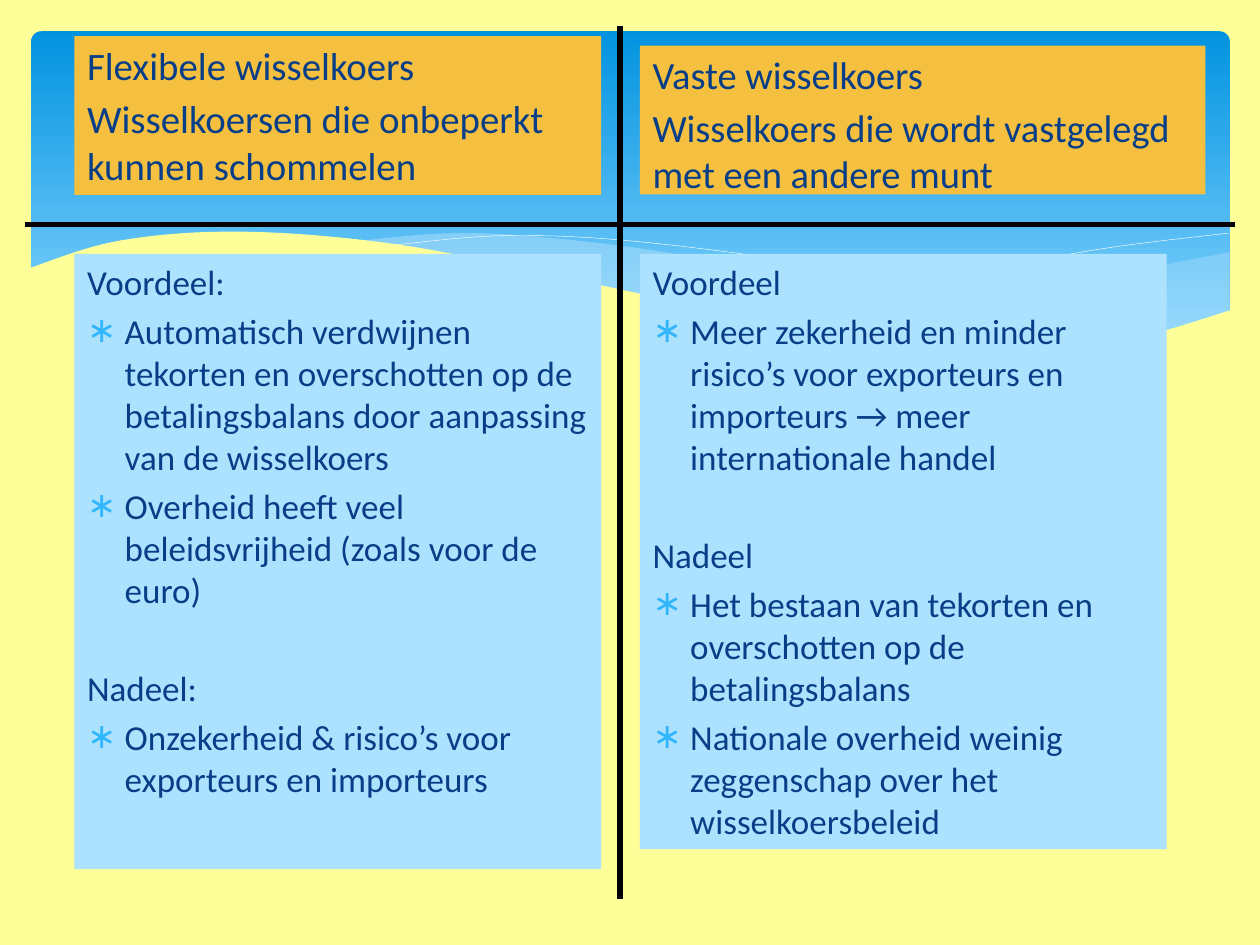
"""Build a slide comparing flexible and fixed exchange rates."""
from lxml.etree import SubElement
from pptx import Presentation
from pptx.dml.color import RGBColor
from pptx.enum.shapes import MSO_CONNECTOR, MSO_SHAPE
from pptx.enum.text import MSO_ANCHOR, MSO_AUTO_SIZE, PP_ALIGN
from pptx.oxml.ns import qn
from pptx.util import Cm, Pt

YELLOW = RGBColor(0xFF, 0xFF, 0x99)
ORANGE = RGBColor(0xF5, 0xC0, 0x40)
PALE_BLUE = RGBColor(0xAD, 0xE2, 0xFE)
NAVY = RGBColor(0x07, 0x3E, 0x87)
SKY_TOP = RGBColor(0x02, 0x93, 0xE0)
SKY_BOTTOM = RGBColor(0x83, 0xD3, 0xFE)
WAVE_BLUE = RGBColor(0xC6, 0xE7, 0xFC)
BULLET_BLUE = RGBColor(0x31, 0xB6, 0xFD)
WHITE = RGBColor(0xFF, 0xFF, 0xFF)
BLACK = RGBColor(0, 0, 0)

CURVE_STEPS = 8
INDENT = Cm(0.76)
ROW_GAP, SECTION_GAP = Pt(4), Pt(32)
BODY_TOP, BODY_WIDTH = 5.12, 10.62

COLUMNS = [
    {"left": 1.5,
     "header": {"top": 0.73, "width": 10.62, "height": 3.2,
                "size": 22.2, "inset": 0.1},
     "body_height": 12.4,
     "definition": ["Flexibele wisselkoers",
                    "Wisselkoersen die onbeperkt kunnen schommelen"],
     "sections": {
         "Voordeel:": [
             "Automatisch verdwijnen tekorten en overschotten op de "
             "betalingsbalans door aanpassing van de wisselkoers",
             "Overheid heeft veel beleidsvrijheid (zoals voor de euro)"],
         "Nadeel:": [
             "Onzekerheid & risico’s voor exporteurs en importeurs"]}},
    {"left": 12.9,
     "header": {"top": 0.92, "width": 11.4, "height": 3,
                "size": 22, "inset": 0.28},
     "body_height": 12,
     "definition": ["Vaste wisselkoers",
                    "Wisselkoers die wordt vastgelegd met een andere munt"],
     "sections": {
         "Voordeel": [
             "Meer zekerheid en minder risico’s voor exporteurs en "
             "importeurs → meer internationale handel"],
         "Nadeel": [
             "Het bestaan van tekorten en overschotten op de betalingsbalans",
             "Nationale overheid weinig zeggenschap over het "
             "wisselkoersbeleid"]}},
]


def smooth_curve(knots):
    """Return points on a Catmull-Rom curve through knots given in cm."""
    padded = [knots[0], *knots, knots[-1]]
    points = []
    for a, b, c, d in zip(padded, padded[1:], padded[2:], padded[3:]):
        for step in range(CURVE_STEPS + 1):
            t = step / CURVE_STEPS
            points.append(tuple(
                Cm(q + t / 2 * (r - p + t * (2 * p - 5 * q + 4 * r - u
                                             + t * (3 * q - p - 3 * r + u))))
                for p, q, r, u in zip(a, b, c, d)))
    return points


def fill_panel(sp, box, color, size, rows):
    """Place a panel and write its (text, bulleted, space before) rows."""
    sp.left, sp.top, sp.width, sp.height = [Cm(v) for v in box]
    sp.fill.solid()
    sp.fill.fore_color.rgb = color
    tf = sp.text_frame
    tf.word_wrap = True
    tf.auto_size = MSO_AUTO_SIZE.NONE
    tf.text = "\n".join(text for text, _, _ in rows)
    for p, (_, bulleted, gap) in zip(tf.paragraphs, rows):
        pPr = p._p.get_or_add_pPr()
        pPr.set("marL", str(INDENT if bulleted else 0))
        pPr.set("indent", str(-INDENT if bulleted else 0))
        if bulleted:
            bullet_color = SubElement(pPr, qn("a:buClr"))
            SubElement(bullet_color, qn("a:srgbClr"), val=str(BULLET_BLUE))
            SubElement(pPr, qn("a:buFont"), typeface="Calibri")
            SubElement(pPr, qn("a:buChar"), char="∗")
        else:
            SubElement(pPr, qn("a:buNone"))
        p.alignment = PP_ALIGN.LEFT
        p.space_before = gap
        for r in p.runs:
            r.font.name = "Calibri"
            r.font.size = Pt(size)
            r.font.bold = False
            r.font.color.rgb = NAVY


prs = Presentation()
prs.slide_width, prs.slide_height = Cm(25.4), Cm(19.05)
s = prs.slides.add_slide(prs.slide_layouts.get_by_name("Comparison"))
s.background.fill.solid()
s.background.fill.fore_color.rgb = YELLOW
title = s.shapes.title._element
title.getparent().remove(title)

sky = s.shapes.add_shape(MSO_SHAPE.ROUNDED_RECTANGLE,
                         Cm(0.63), Cm(0.63), Cm(24.16), Cm(6.86))
sky.adjustments[0] = 0.03
sky.shadow.inherit = False
sky.line.fill.background()
sky.fill.gradient()
sky.fill.gradient_angle = 270
top, bottom = sky.fill.gradient_stops
top.color.rgb, top.position = SKY_TOP, 0
bottom.color.rgb, bottom.position = SKY_BOTTOM, 0.9

right_wave = (
    smooth_curve([(24.79, 5.08), (21.87, 5.66), (19.13, 6.3), (16.79, 6.73)])
    + smooth_curve([(16.79, 6.73), (18.92, 6.99), (20.68, 7.06),
                    (22.58, 6.91), (24.79, 6.27)]))
middle_wave = (
    smooth_curve([(22.68, 6.93), (19.69, 6.45), (15.98, 5.64),
                  (13.06, 5.03), (9.65, 4.7), (7.26, 4.85)])
    + smooth_curve([(7.26, 4.85), (11.4, 5.64), (15.27, 6.48),
                    (18.34, 6.96), (20.78, 7.06), (22.68, 6.93)]))
long_crest = smooth_curve([(7.85, 4.95), (10.19, 4.75), (12.95, 4.88),
                           (16.89, 5.41), (20.19, 6.12), (23.04, 6.91)])
short_crest = smooth_curve([(15.57, 6.53), (19, 5.66), (22, 5.05),
                            (24.77, 4.7)])
foreground = smooth_curve([
    (24.82, 6.25), (22.53, 6.88), (19.76, 7.01), (16.46, 6.65),
    (11.35, 5.59), (8.03, 4.93), (4.9, 4.67), (2.41, 4.85), (0.58, 5.41)])
foreground += [(Cm(0.58), Cm(8.36)), (Cm(24.82), Cm(8.36))]

for outline, color, opacity in [(right_wave, WAVE_BLUE, 29),
                                (middle_wave, WAVE_BLUE, 40),
                                (long_crest, None, 100),
                                (short_crest, None, 100),
                                (foreground, YELLOW, 100)]:
    builder = s.shapes.build_freeform(*outline[0])
    builder.add_line_segments(outline[1:], close=color is not None)
    wave = builder.convert_to_shape()
    wave.shadow.inherit = False
    if color is None:
        wave.fill.background()
        wave.line.color.rgb = WHITE
        wave.line.width = Pt(0.25)
    else:
        wave.line.fill.background()
        wave.fill.solid()
        wave.fill.fore_color.rgb = color
        rgb = wave._element.spPr.find(".//" + qn("a:srgbClr"))
        SubElement(rgb, qn("a:alpha"), val=str(opacity * 1000))

panels = list(s.placeholders)
for sp in panels:
    s.shapes._spTree.append(sp._element)

for column, header, body in zip(COLUMNS, panels[::2], panels[1::2]):
    look = column["header"]
    box = (column["left"], look["top"], look["width"], look["height"])
    rows = [(text, False, ROW_GAP if i else 0)
            for i, text in enumerate(column["definition"])]
    fill_panel(header, box, ORANGE, look["size"], rows)
    header.text_frame.vertical_anchor = MSO_ANCHOR.MIDDLE
    header.text_frame.margin_top = Cm(look["inset"])

    box = (column["left"], BODY_TOP, BODY_WIDTH, column["body_height"])
    rows = []
    for heading, points in column["sections"].items():
        rows.append((heading, False, SECTION_GAP if rows else 0))
        rows += [(point, True, ROW_GAP) for point in points]
    fill_panel(body, box, PALE_BLUE, 20, rows)

for ends in [(0.5, 4.52, 24.9, 4.52), (12.5, 0.53, 12.5, 18.13)]:
    divider = s.shapes.add_connector(MSO_CONNECTOR.STRAIGHT,
                                     *[Cm(v) for v in ends])
    divider.line.color.rgb = BLACK
    divider.line.width = Pt(3)
    SubElement(divider._element.spPr, qn("a:effectLst"))

prs.save("out.pptx")
